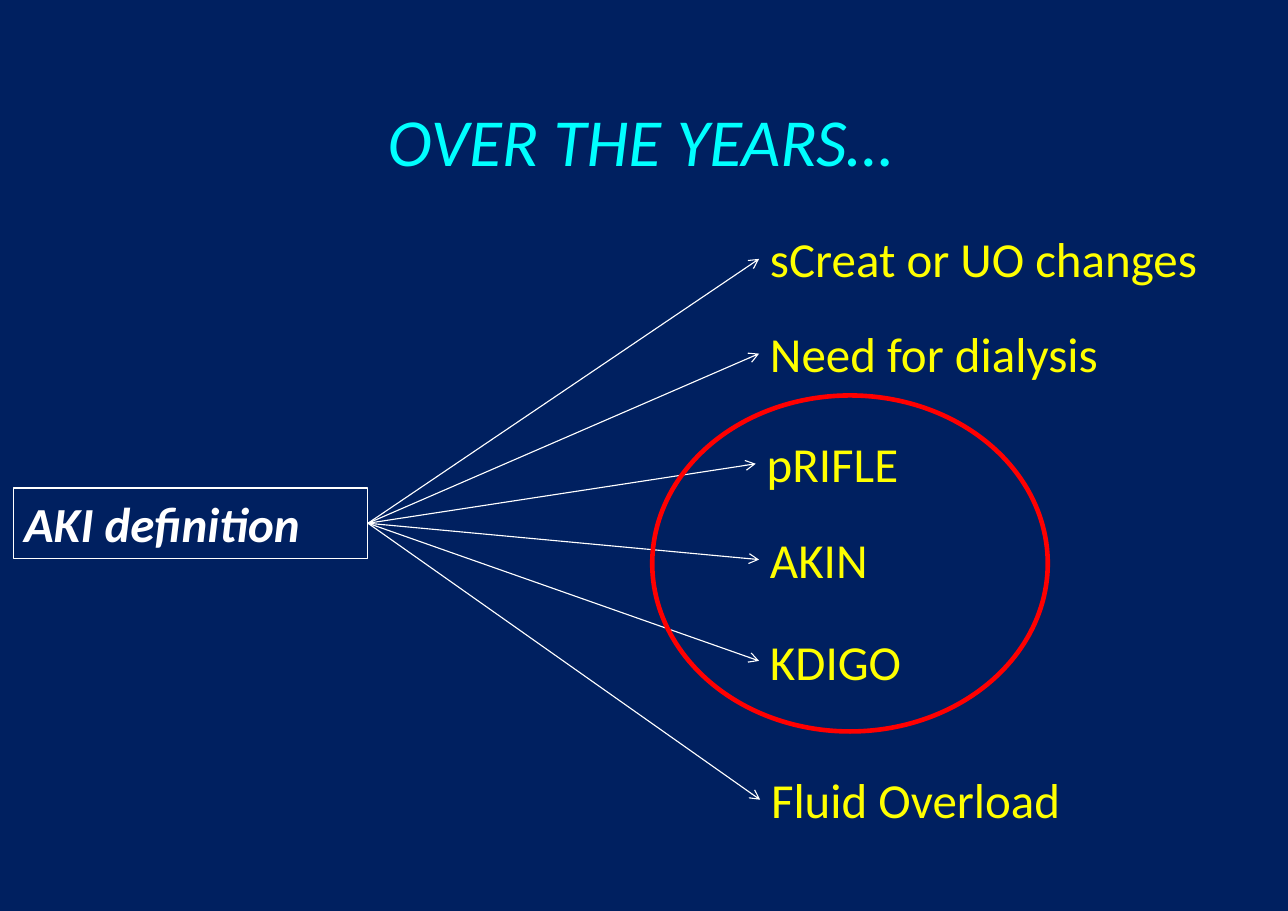
from lxml.etree import SubElement
from pptx import Presentation
from pptx.dml.color import RGBColor
from pptx.enum.shapes import MSO_CONNECTOR, MSO_SHAPE
from pptx.enum.text import MSO_ANCHOR, MSO_AUTO_SIZE, PP_ALIGN
from pptx.oxml.ns import qn
from pptx.util import Inches, Pt

NAVY = RGBColor(0x00, 0x20, 0x60)
WHITE = RGBColor(0xFF, 0xFF, 0xFF)
YELLOW = RGBColor(0xFF, 0xFF, 0x00)
CYAN = RGBColor(0x00, 0xFF, 0xFF)
RED = RGBColor(0xFF, 0x00, 0x00)

FONT = "Calibri"
SLIDE_WIDTH, SLIDE_HEIGHT = Inches(11.69), Inches(8.27)
LINE_HEIGHT = 7.74

TITLE = ("OVER THE YEARS…", (29.26, 10.28, 41.49, 10.16))
SUBJECT = ("AKI definition", (1.03, 53.57, 27.54, LINE_HEIGHT))
CRITERIA = [
    ("sCreat or UO changes", 58.94, 24.55, 37.9),
    ("Need for dialysis", 58.94, 34.95, 28.83),
    ("pRIFLE", 58.68, 47.04, 21.04),
    ("AKIN", 58.94, 57.56, 16.85),
    ("KDIGO", 58.94, 68.68, 21.04),
    ("Fluid Overload", 59.02, 83.92, 34.39),
]
HIGHLIGHT = (50.64, 43.41, 30.71, 36.88)


def place(percentages):
    sizes = (SLIDE_WIDTH, SLIDE_HEIGHT) * 2
    return [round(size * share / 100) for size, share in zip(sizes, percentages)]


def write(shape, text, size, color, bold=False, italic=False, wrap=True):
    frame = shape.text_frame
    frame.word_wrap = wrap
    frame.auto_size = MSO_AUTO_SIZE.SHAPE_TO_FIT_TEXT
    frame.vertical_anchor = MSO_ANCHOR.TOP
    paragraph = frame.paragraphs[0]
    paragraph.alignment = PP_ALIGN.LEFT
    run = paragraph.add_run()
    run.text = text
    font = run.font
    font.name, font.size = FONT, Pt(size)
    font.bold, font.italic = bold, italic
    font.color.rgb = color


def add_outline(slide, kind, percentages, color, width):
    shape = slide.shapes.add_shape(kind, *place(percentages))
    shape.shadow.inherit = False
    shape.fill.background()
    shape.line.color.rgb = color
    shape.line.width = Pt(width)
    return shape


def add_arrow(slide, source, target):
    arrow = slide.shapes.add_connector(MSO_CONNECTOR.STRAIGHT, 0, 0, 0, 0)
    arrow.begin_connect(source, 3)
    arrow.end_connect(target, 1)
    arrow.line.color.rgb = WHITE
    arrow.line.width = Pt(0.75)
    SubElement(arrow.line._get_or_add_ln(), qn("a:tailEnd"), type="arrow")
    SubElement(arrow._element.spPr, qn("a:effectLst"))


def main():
    presentation = Presentation()
    presentation.slide_width = SLIDE_WIDTH
    presentation.slide_height = SLIDE_HEIGHT
    slide = presentation.slides.add_slide(presentation.slide_layouts[6])
    slide.background.fill.solid()
    slide.background.fill.fore_color.rgb = NAVY

    text, area = SUBJECT
    subject = add_outline(slide, MSO_SHAPE.RECTANGLE, area, WHITE, 0.75)
    write(subject, text, 32, WHITE, bold=True, italic=True)

    for text, left, top, width in CRITERIA:
        area = (left, top, width, LINE_HEIGHT)
        criterion = slide.shapes.add_textbox(*place(area))
        write(criterion, text, 32, YELLOW)
        add_arrow(slide, subject, criterion)

    text, area = TITLE
    title = slide.shapes.add_textbox(*place(area))
    write(title, text, 44, CYAN, italic=True, wrap=False)

    add_outline(slide, MSO_SHAPE.OVAL, HIGHLIGHT, RED, 3)
    presentation.save("out.pptx")


if __name__ == "__main__":
    main()
